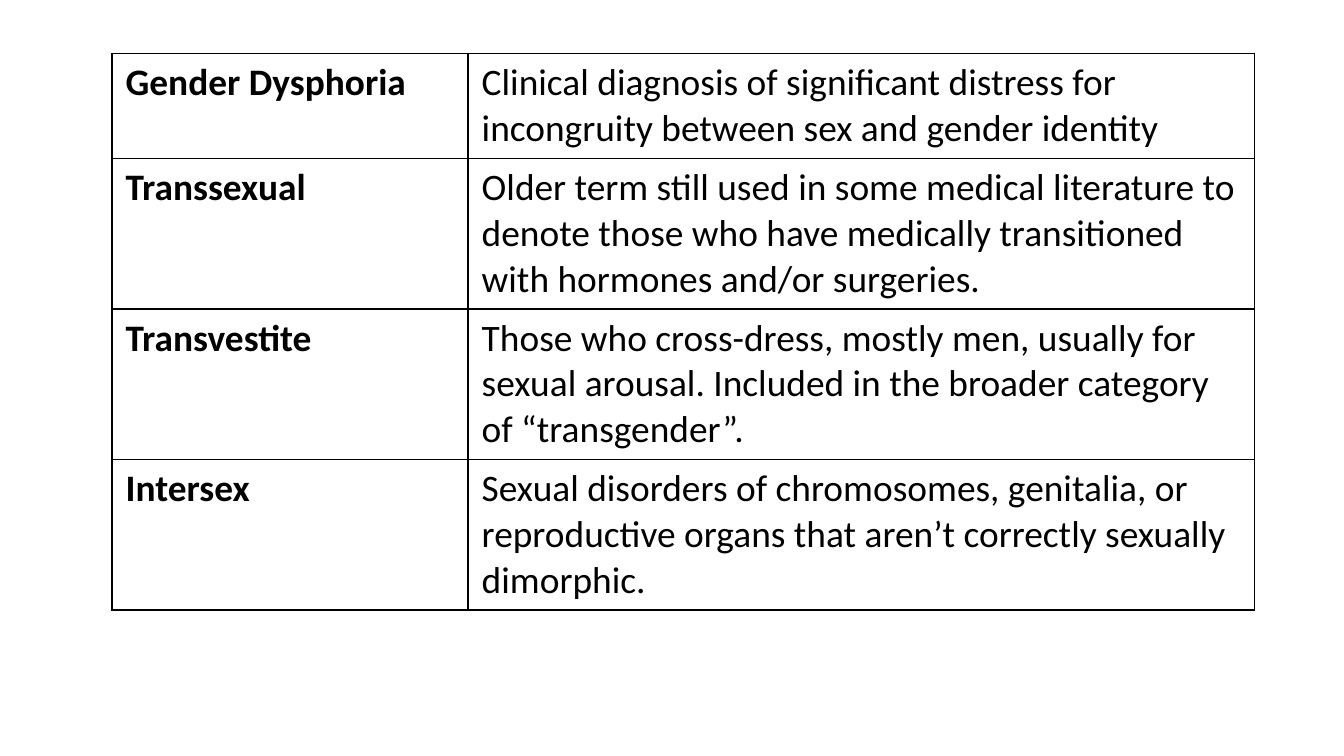
"""Build a slide with a table of four terms and their definitions."""
import pptx
import pptx.dml.color
import pptx.oxml
import pptx.oxml.ns
import pptx.util
from pptx.util import Cm

INK = "000000"
PAPER = "FFFFFF"


def color(value):
    return pptx.dml.color.RGBColor.from_string(value)


def add_border(cell, side):
    cell._tc.get_or_add_tcPr().append(pptx.oxml.parse_xml(
        f'<a:{side} {pptx.oxml.ns.nsdecls("a")} w="{pptx.util.Pt(1)}">'
        f'<a:solidFill><a:srgbClr val="{INK}"/></a:solidFill></a:{side}>'))


definitions = {
    "Gender Dysphoria": "Clinical diagnosis of significant distress for "
                        "incongruity between sex and gender identity",
    "Transsexual": "Older term still used in some medical literature to denote "
                   "those who have medically transitioned with hormones and/or surgeries.",
    "Transvestite": "Those who cross-dress, mostly men, usually for sexual arousal. "
                    "Included in the broader category of “transgender”.",
    "Intersex": "Sexual disorders of chromosomes, genitalia, or reproductive organs "
                "that aren’t correctly sexually dimorphic.",
}
column_widths = [Cm(6.73), Cm(14.86)]
row_heights = [Cm(1.98)] + [Cm(2.84)] * 3
font_format = {"name": "Calibri", "size": pptx.util.Pt(20)}
table_format = {"first_row": False, "horz_banding": False}

presentation = pptx.Presentation()
presentation.slide_width = Cm(25.4)
presentation.slide_height = Cm(14.29)
slide = presentation.slides.add_slide(presentation.slide_layouts[6])

glossary = slide.shapes.add_table(
    len(definitions), 2, Cm(2.12), Cm(1.01), sum(column_widths), sum(row_heights)).table
for attribute, value in table_format.items():
    setattr(glossary, attribute, value)
for column, width in zip(glossary.columns, column_widths):
    column.width = width
for row, height in zip(glossary.rows, row_heights):
    row.height = height

for row, entry in zip(glossary.rows, definitions.items()):
    for position, (cell, wording) in enumerate(zip(row.cells, entry)):
        for side in ("lnL", "lnR", "lnT", "lnB"):
            add_border(cell, side)
        cell.fill.solid()
        cell.fill.fore_color.rgb = color(PAPER)
        cell.text = wording
        font = cell.text_frame.paragraphs[0].runs[0].font
        for attribute, value in font_format.items():
            setattr(font, attribute, value)
        font.bold = position == 0
        font.color.rgb = color(INK)

presentation.save("out.pptx")
